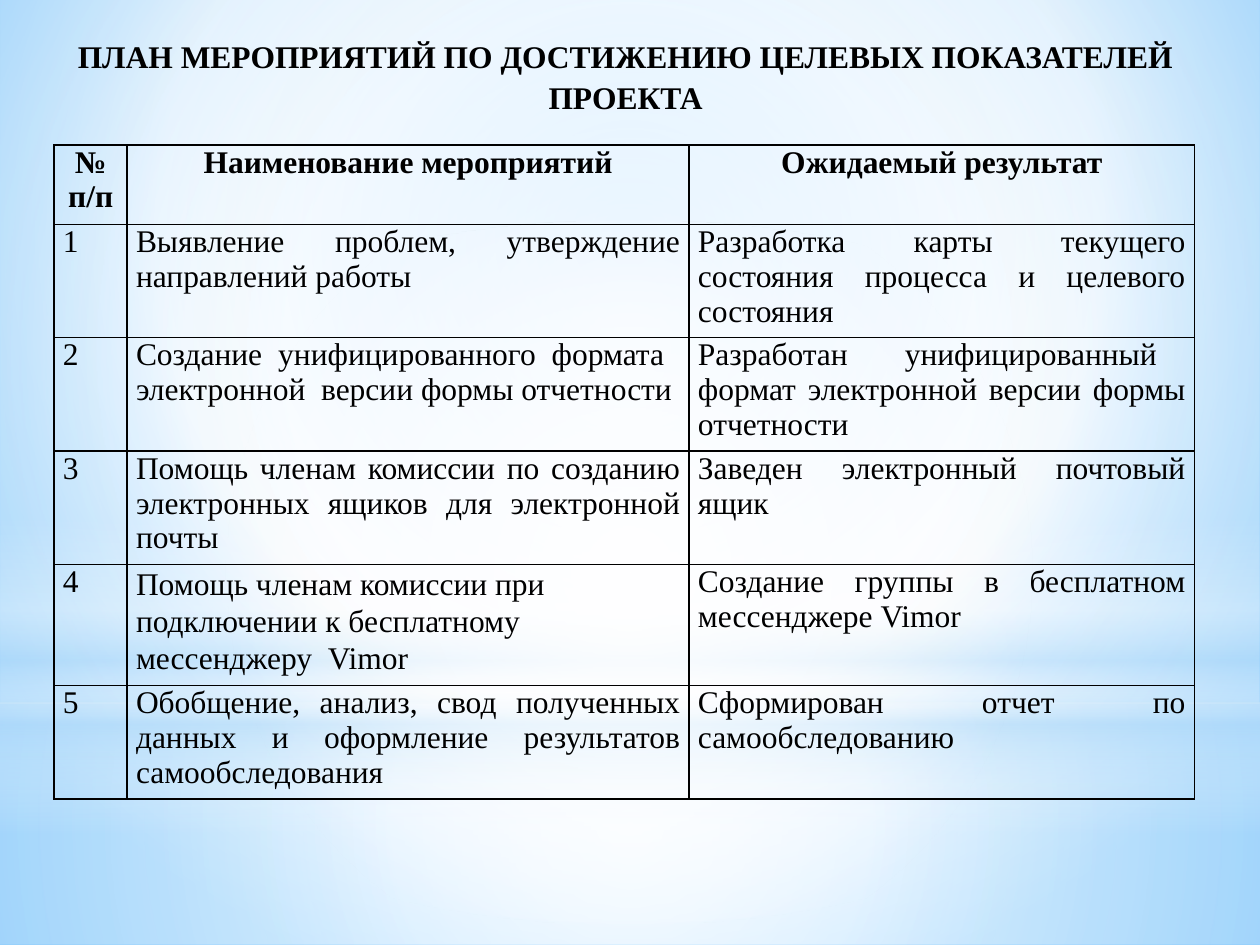
import pptx
import pptx.util
import pptx.dml.color
import pptx.enum.shapes
import pptx.enum.text
import pptx.oxml.ns
from lxml import etree

Inches, Pt = pptx.util.Inches, pptx.util.Pt
Shape = pptx.enum.shapes.MSO_SHAPE
Align = pptx.enum.text.PP_ALIGN
qn = pptx.oxml.ns.qn

HEADS = ["№ п/п", "Наименование мероприятий", "Ожидаемый результат"]
STEPS = [
    ("Выявление проблем, утверждение направлений работы",
     "Разработка карты текущего состояния процесса и целевого состояния"),
    ("Создание унифицированного формата  электронной  версии формы отчетности",
     "Разработан  унифицированный  формат электронной версии формы отчетности"),
    ("Помощь членам комиссии по созданию электронных ящиков для электронной почты",
     "Заведен электронный почтовый ящик"),
    ("Помощь членам комиссии при подключении к бесплатному мессенджеру  Vimor",
     "Создание группы в бесплатном мессенджере Vimor"),
    ("Обобщение, анализ, свод полученных данных и оформление результатов самообследования",
     "Сформирован отчет по самообследованию"),
]
WIDTHS = [0.58, 4.46, 4.01]
HEIGHTS = [0.63, 0.9, 0.9, 0.9, 0.96, 0.9]
LOOSE = (4, 1)  # the one cell set left with wider lines

MID = (50, 50, 50, 50)
GLOWS = [
    (Shape.RECTANGLE, (0, 5.58, 10, 1.92), MID,
     [(0, "FFFFFF", 91), (37, "FFFFFF", 76), (100, "B4DCFA", 79)]),
    (Shape.RECTANGLE, (0, 0, 10, 5.58), MID,
     [(0, "FFFFFF", 89), (48, "FFFFFF", 62), (100, "B4DCFA", 79)]),
    (Shape.RECTANGLE, (0, 4.12, 10, 2.5), None,
     [(0, "FFFFFF", 0), (29, "FFFFFF", 30), (45, "B4DCFA", 40),
      (55, "FFFFFF", 26), (65, "B4DCFA", 60), (100, "FFFFFF", 0)]),
    (Shape.OVAL, (0, 1.75, 10, 5.58), MID,
     [(0, "FFFFFF", 100), (56, "FFFFFF", 0)]),
]


def color(code):
    return pptx.dml.color.RGBColor.from_string(code)


def node(parent, tag, **attrs):
    return etree.SubElement(parent, qn(tag), {k: str(v) for k, v in attrs.items()})


class Deck:
    font, size, ink = "Times New Roman", 18, "000000"

    def __init__(self, wide, high):
        self.file = pptx.Presentation()
        self.file.slide_width, self.file.slide_height = Inches(wide), Inches(high)
        self.slide = self.file.slides.add_slide(self.file.slide_layouts[5])

    def blend(self, fill, owner, stops, focus=None):
        """Give a fill its gradient: round about focus, or else top to bottom."""
        fill.gradient()
        grad = next(owner.iter(qn("a:gradFill")))
        for child in list(grad):
            grad.remove(child)
        group = node(grad, "a:gsLst")
        for pos, code, solid in stops:
            stop = node(group, "a:gs", pos=pos * 1000)
            tint = node(stop, "a:srgbClr", val=code)
            if solid < 100:
                node(tint, "a:alpha", val=solid * 1000)
        if focus:
            ring = node(grad, "a:path", path="circle")
            sides = {k: v * 1000 for k, v in zip("ltrb", focus)}
            node(ring, "a:fillToRect", **sides)
        else:
            node(grad, "a:lin", ang=90 * 60000, scaled=0)

    def backdrop(self, stops, focus):
        self.blend(self.slide.background.fill, self.slide.element, stops, focus)

    def glow(self, kind, box, focus, stops):
        shape = self.slide.shapes.add_shape(kind, *map(Inches, box))
        shape.shadow.inherit = False
        shape.line.fill.background()
        self.blend(shape.fill, shape.element.spPr, stops, focus)

    def text(self, frame, words, align, bold=False, space=None):
        para = frame.paragraphs[0]
        para.alignment = align
        if space:
            para.line_spacing = space
        run = para.add_run()
        run.text = words
        run.font.name, run.font.size, run.font.bold = self.font, Pt(self.size), bold
        run.font.color.rgb = color(self.ink)

    def title(self, words, box):
        shape = self.slide.shapes.title
        shape.left, shape.top, shape.width, shape.height = map(Inches, box)
        frame = shape.text_frame
        frame.word_wrap = True
        frame.auto_size = pptx.enum.text.MSO_AUTO_SIZE.NONE
        frame.vertical_anchor = pptx.enum.text.MSO_ANCHOR.TOP
        self.text(frame, words, Align.CENTER, bold=True, space=1.1)
        self.slide.shapes.element.append(shape.element)  # bring to front

    def cell(self, cell, words, align, bold, space):
        cell.margin_left = cell.margin_right = Inches(0.07)
        cell.margin_top = cell.margin_bottom = 0
        self.text(cell.text_frame, words, align, bold, space)
        props = cell._tc.get_or_add_tcPr()
        for side in "LRTB":
            edge = node(props, "a:ln" + side, w=Pt(1))
            node(node(edge, "a:solidFill"), "a:srgbClr", val=self.ink)
        cell.fill.background()

    def table(self, rows, left, top):
        box = map(Inches, (left, top, sum(WIDTHS), sum(HEIGHTS)))
        grid = self.slide.shapes.add_table(len(rows), len(WIDTHS), *box).table
        grid.first_row = grid.horz_banding = False
        for col, wide in zip(grid.columns, WIDTHS):
            col.width = Inches(wide)
        for r, row in enumerate(rows):
            grid.rows[r].height = Inches(HEIGHTS[r])
            for c, words in enumerate(row):
                loose = (r, c) == LOOSE
                align = Align.CENTER if r == 0 else Align.LEFT if loose else Align.JUSTIFY
                self.cell(grid.cell(r, c), words, align, r == 0, 1.07 if loose else None)


def main():
    deck = Deck(10, 7.5)
    deck.backdrop([(0, "9ED5FF", 100), (60, "FFFFFF", 100), (100, "5BB9FF", 100)],
                  (20, 10, 20, 60))
    for glow in GLOWS:
        deck.glow(*glow)
    deck.title("ПЛАН МЕРОПРИЯТИЙ ПО ДОСТИЖЕНИЮ ЦЕЛЕВЫХ ПОКАЗАТЕЛЕЙ ПРОЕКТА",
               (0.2, 0.21, 9.53, 0.71))
    steps = [(str(i), *step) for i, step in enumerate(STEPS, 1)]
    deck.table([HEADS] + steps, 0.43, 1.15)
    deck.file.save("out.pptx")


if __name__ == "__main__":
    main()
